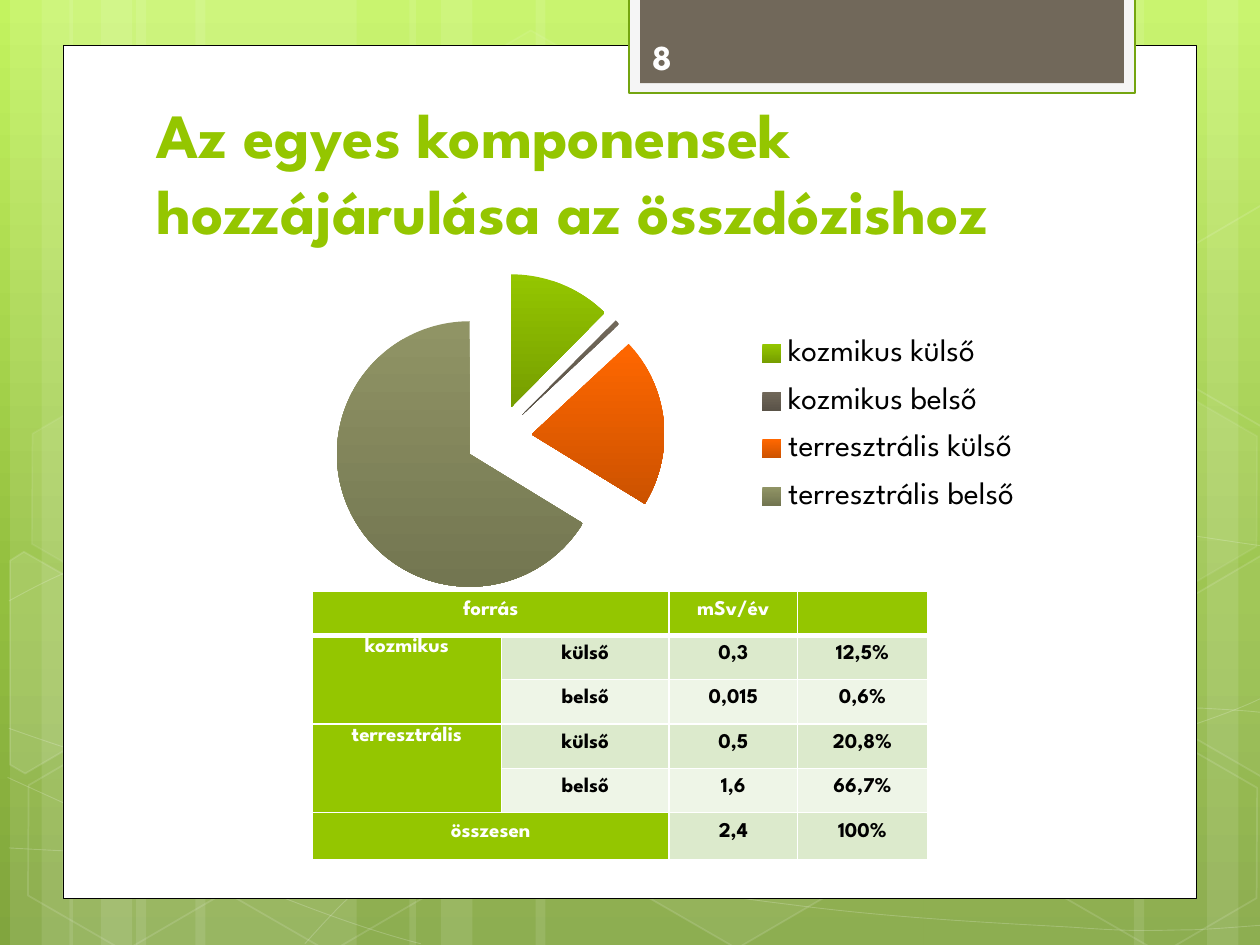
from copy import deepcopy
from lxml import etree
from pptx import Presentation
from pptx.chart.data import CategoryChartData
from pptx.dml.color import RGBColor
from pptx.enum.chart import XL_CHART_TYPE, XL_LEGEND_POSITION
from pptx.enum.shapes import MSO_SHAPE
from pptx.enum.text import MSO_ANCHOR, MSO_AUTO_SIZE, PP_ALIGN
from pptx.oxml.ns import qn
from pptx.util import Inches, Pt

RECT, HEXAGON = MSO_SHAPE.RECTANGLE, MSO_SHAPE.HEXAGON
PIE, RIGHT = XL_CHART_TYPE.PIE, XL_LEGEND_POSITION.RIGHT
LEFT, CENTER = PP_ALIGN.LEFT, PP_ALIGN.CENTER
MIDDLE, BOTTOM = MSO_ANCHOR.MIDDLE, MSO_ANCHOR.BOTTOM
NO_FIT = MSO_AUTO_SIZE.NONE
FONT = "League Spartan"
WHITE = RGBColor(0xFF, 0xFF, 0xFF)
OFF_WHITE = RGBColor(0xFE, 0xFE, 0xFE)
BLACK = RGBColor(0, 0, 0)
GREEN = RGBColor(0x94, 0xC6, 0x00)
DARK_GREEN = RGBColor(0x74, 0xA5, 0x10)
BROWN = RGBColor(0x71, 0x68, 0x5A)
ORANGE = RGBColor(0xFF, 0x67, 0x00)
OLIVE = RGBColor(0x90, 0x94, 0x65)
PALE = RGBColor(0xF5, 0xF5, 0xF5)
BAND_1 = RGBColor(0xDC, 0xEA, 0xCC)
BAND_2 = RGBColor(0xEE, 0xF5, 0xE7)
SKY = [(0, RGBColor(0xC3, 0xF3, 0x5F)), (62, RGBColor(0x93, 0xBF, 0x3F)),
       (100, RGBColor(0x81, 0xA5, 0x3E))]

prs = Presentation()
prs.slide_width, prs.slide_height = Inches(10), Inches(7.5)
COL = prs.slide_width // 10
s = prs.slides.add_slide(prs.slide_layouts[5])


def grid(*cells):
    return [int(c * COL) for c in cells]


def paint(sp, fill=None, fill_alpha=100, line=None, width=1, line_alpha=100):
    sp.shadow.inherit = False
    for part, color in ((sp.fill, fill), (sp.line.fill, line)):
        if color is None:
            part.background()
            continue
        part.solid()
        part.fore_color.rgb = color
    if line is not None:
        sp.line.width = Pt(width)
    props = sp.element.spPr
    for owner, alpha in ((props, fill_alpha), (props.find(qn("a:ln")), line_alpha)):
        clr = owner.find(qn("a:solidFill") + "/" + qn("a:srgbClr"))
        if clr is not None and alpha < 100:
            etree.SubElement(clr, qn("a:alpha")).set("val", str(alpha * 1000))


bg = s.background.fill
bg.gradient()
bg.gradient_angle = 270
stops = next(s.element.iter(qn("a:gsLst")))
stops.append(deepcopy(stops[-1]))
for stop, (pos, color) in zip(bg.gradient_stops, SKY):
    stop.position = pos / 100
    stop.color.rgb = color

stripes = [(1.08, 1.75), (0.08, 0.5), (0.33, 0.83), (1.55, 1.75), (0.55, 0.5), (0.8, 0.83),
           (7.33, 1.75), (9.58, 0.5), (9, 0.83), (4.25, 3.08), (3.25, 0.5), (3.5, 0.83)]
for x, w in stripes:
    sp = s.shapes.add_shape(RECT, *grid(x, 0, w, 7.5))
    paint(sp, WHITE, 10)

curves = [
    [(0.07, 6.73), (0.61, 6.76), (1.15, 6.79), (1.9, 6.78), (2.65, 6.77), (3.58, 6.75),
     (4.58, 6.65), (5.58, 6.55), (7, 6.36), (7.92, 6.17), (8.83, 5.98), (9.77, 5.68), (10.07, 5.51)],
    [(0.07, 4.77), (0.36, 4.61), (0.65, 4.46), (1.21, 4.31), (1.78, 4.16), (2.59, 3.94),
     (3.47, 3.87), (4.36, 3.8), (5.44, 3.79), (6.54, 3.87), (7.64, 3.95), (9.47, 4.26), (10.07, 4.34)],
    [(0.06, 6.17), (1.27, 6.72), (2.47, 7.27), (3.34, 7.49)],
    [(0.07, 5.78), (0.38, 5.89), (0.7, 6), (1.28, 6.16), (1.86, 6.31), (2.73, 6.56),
     (3.57, 6.73), (4.4, 6.9), (5.45, 7.08), (6.28, 7.18), (7.11, 7.29), (8, 7.33),
     (8.53, 7.36), (9.05, 7.4), (9.19, 7.38), (9.45, 7.38), (9.71, 7.37), (9.89, 7.35), (10.07, 7.34)],
    [(2.42, 7.49), (2.6, 7.29), (2.78, 7.09), (3.02, 6.91), (3.26, 6.73), (3.6, 6.53),
     (3.88, 6.39), (4.16, 6.25), (4.33, 6.19), (4.7, 6.09), (5.06, 5.99), (5.73, 5.85),
     (6.08, 5.78), (6.44, 5.71), (6.49, 5.71), (6.8, 5.69), (7.11, 5.66), (7.6, 5.63),
     (7.94, 5.62), (8.29, 5.61), (8.86, 5.62), (8.86, 5.62), (9.08, 5.62), (9.3, 5.62),
     (9.53, 5.62), (9.71, 5.63), (9.88, 5.64), (9.97, 5.65), (10.06, 5.66), (10.03, 5.65), (10.06, 5.66)],
]
for knots in curves:
    builder = s.shapes.build_freeform(*grid(*knots[0]))
    builder.add_line_segments([grid(*k) for k in knots[1:]], close=False)
    sp = builder.convert_to_shape()
    outline = next(sp.element.iter(qn("a:path")))
    segments = outline.findall(qn("a:lnTo"))
    for i in range(0, len(segments), 3):
        bezier = etree.SubElement(outline, qn("a:cubicBezTo"))
        for segment in segments[i:i + 3]:
            bezier.append(segment[0])
            outline.remove(segment)
    paint(sp, line=WHITE, width=0.5, line_alpha=20)

hexagons = [(3.34, 0.36, 4, 8), (4.97, 5.89, 6, 12), (0.11, 5.91, 0, 12), (0.14, 3.12, 7, 8),
            (1.74, 5.92, 0, 12), (7.53, 4.53, 10, 12), (8.34, 5.93, 0, 12), (8.34, 3.14, 7, 8)]
for x, y, fill_alpha, line_alpha in hexagons:
    sp = s.shapes.add_shape(HEXAGON, *grid(x, y, 1.75, 1.52))
    sp.adjustments[0] = 0.285
    sp.rotation = 30
    paint(sp, WHITE if fill_alpha else None, fill_alpha, WHITE, 1, line_alpha)

cut_hexagons = [
    (10, [(0.08, 4.45), (0.19, 4.38), (0.96, 4.82), (0.95, 5.7), (0.2, 6.14), (0.08, 6.07)]),
    (4, [(9.26, 4.85), (10.01, 4.41), (10.09, 4.46), (10.09, 6.13), (10.02, 6.17), (9.26, 5.73)]),
    (0, [(9.26, 2.07), (10.01, 1.63), (10.1, 1.68), (10.09, 3.35), (10.02, 3.39), (9.26, 2.95)]),
]
for fill_alpha, corners in cut_hexagons:
    builder = s.shapes.build_freeform(*grid(*corners[0]))
    builder.add_line_segments([grid(*c) for c in corners[1:]], close=True)
    paint(builder.convert_to_shape(), WHITE if fill_alpha else None, fill_alpha, WHITE, 1, 12)

panels = [((0.5, 0.36, 9, 6.77), WHITE, BLACK, 0.5),
          ((4.99, -0.02, 4.02, 0.76), PALE, DARK_GREEN, 1.25),
          ((5.08, -0.02, 3.84, 0.68), BROWN, None, 0)]
for cells, fill, line, width in panels:
    paint(s.shapes.add_shape(RECT, *grid(*cells)), fill, line=line, width=width)

title = s.shapes.title
title.element.getparent().append(title.element)
title.left, title.top, title.width, title.height = grid(1.14, 0.76, 7.68, 1.25)
title.text_frame.text = "Az egyes komponensek hozzájárulása az összdózishoz"
number = s.shapes.add_textbox(*grid(5.08, 0.25, 1.46, 0.4))
number.text_frame.text = "8"
for sp, anchor, size, color in ((title, BOTTOM, 36, GREEN), (number, MIDDLE, 20, OFF_WHITE)):
    tf = sp.text_frame
    tf.word_wrap = True
    tf.auto_size = NO_FIT
    tf.vertical_anchor = anchor
    p = tf.paragraphs[0]
    p.alignment = LEFT
    font = p.runs[0].font
    font.name, font.size, font.bold = FONT, Pt(size), True
    font.color.rgb = color

data = CategoryChartData()
data.categories = ["kozmikus külső", "kozmikus belső", "terresztrális külső", "terresztrális belső"]
data.add_series("Series 1", (0.3, 0.015, 0.5, 1.6))
chart = s.shapes.add_chart(PIE, *grid(1.85, 2.02, 6.46, 2.91), data).chart
chart.has_title = False
chart.has_legend = True
legend = chart.legend
legend.position = RIGHT
legend.include_in_layout = False
chart.font.name, chart.font.size = FONT, Pt(18)
chart.font.color.rgb = BLACK
layout = legend._element.find(qn("c:layout"))
if layout is None:
    layout = etree.Element(qn("c:layout"))
    legend._element.find(qn("c:legendPos")).addnext(layout)
manual = etree.SubElement(layout, qn("c:manualLayout"))
for tag, val in (("xMode", "edge"), ("yMode", "edge"), ("x", "0.64"), ("y", "0.18"),
                 ("w", "0.33"), ("h", "0.57")):
    etree.SubElement(manual, qn("c:" + tag), val=val)
plot = chart.plots[0]
plot.vary_by_categories = True
series = plot.series[0]
for i, color in enumerate((GREEN, BROWN, ORANGE, OLIVE)):
    fill = series.points[i].format.fill
    fill.gradient()
    fill.gradient_angle = 270
    for stop, shade in zip(fill.gradient_stops, (0, -0.2)):
        stop.color.rgb = color
        stop.color.brightness = shade
explosion = etree.Element(qn("c:explosion"), val="25")
series._element.find(qn("c:dPt")).addprevious(explosion)

rows = [("forrás", "", "mSv/év", ""),
        ("kozmikus", "külső", "0,3", "12,5%"),
        ("", "belső", "0,015", "0,6%"),
        ("terresztrális", "külső", "0,5", "20,8%"),
        ("", "belső", "1,6", "66,7%"),
        ("összesen", "", "2,4", "100%")]
table = s.shapes.add_table(6, 4, *grid(2.48, 4.69, 4.88, 2.13)).table
for col, w in zip(table.columns, grid(1.5, 1.33, 1.02, 1.03)):
    col.width = w
for row, h in zip(table.rows, grid(*[(2.13 - 0.37) / 5] * 5, 0.37)):
    row.height = h
for r, texts in enumerate(rows):
    for c, text in enumerate(texts):
        cell = table.cell(r, c)
        header = r == 0 or c == 0
        cell.margin_left = cell.margin_right = Inches(0.07)
        cell.margin_top = cell.margin_bottom = 0
        for side in "LRTB":
            thick = (r, side) in ((0, "B"), (1, "T"))
            ln = etree.SubElement(cell._tc.get_or_add_tcPr(), qn("a:ln" + side),
                                  w=str(Pt(3 if thick else 1)))
            solid = etree.SubElement(ln, qn("a:solidFill"))
            etree.SubElement(solid, qn("a:srgbClr"), val=str(WHITE))
        cell.fill.solid()
        cell.fill.fore_color.rgb = GREEN if header else BAND_1 if r % 2 else BAND_2
        if text:
            cell.text_frame.text = text
            p = cell.text_frame.paragraphs[0]
            p.alignment = CENTER
            p.line_spacing = 1.15 if c == 0 and r in (1, 3) else 1.5
            font = p.runs[0].font
            font.name, font.size, font.bold = FONT, Pt(12), True
            font.color.rgb = WHITE if header else BLACK
for start, end in (((0, 0), (0, 1)), ((1, 0), (2, 0)), ((3, 0), (4, 0)), ((5, 0), (5, 1))):
    table.cell(*start).merge(table.cell(*end))

prs.save("out.pptx")
